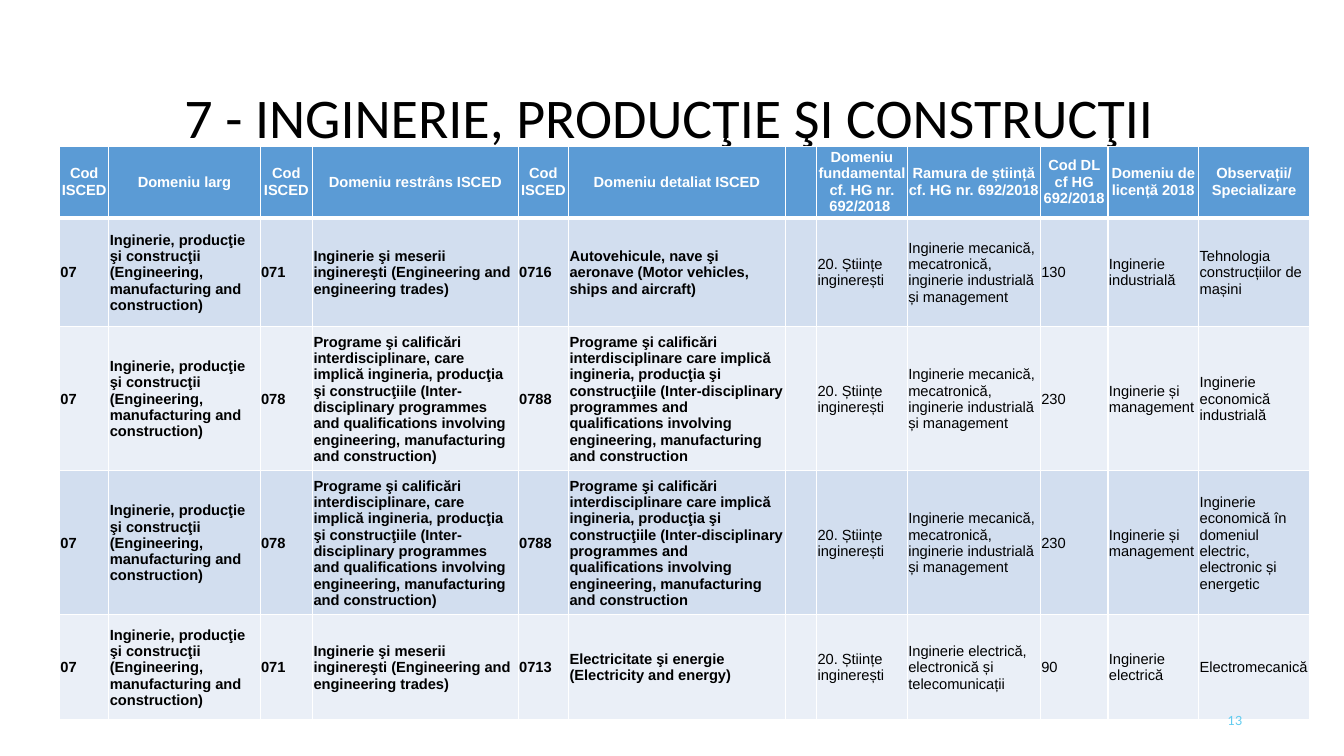
from dataclasses import dataclass

from lxml import etree
from pptx import Presentation, util as u
from pptx.dml.color import RGBColor
from pptx.enum import text
from pptx.oxml import ns

SLIDE_W, SLIDE_H = 13.33, 7.5


@dataclass(frozen=True)
class Theme:
    white: str = "FFFFFF"
    ink: str = "000000"
    header: str = "5B9BD5"
    bands: tuple = ("D2DEEF", "EAEFF7")
    page: str = "5FCBEF"
    title_font: str = "Calibri"
    table_font: str = "Arial"
    page_font: str = "Lato"
    title_size: float = 40
    table_size: float = 10.5
    page_size: float = 9
    rule: float = 1
    header_rule: float = 3


THEME = Theme()

COLUMNS = [0.49, 1.5, 0.52, 2.04, 0.5, 2.15, 0.31, 0.9, 1.32, 0.67, 0.9, 1.1]
ROWS = [0.71, 1.08, 1.43, 1.43, 1.04]
BOLD_COLUMNS = 7

HEADINGS = (
    "Cod ISCED", "Domeniu larg", "Cod ISCED", "Domeniu restrâns ISCED",
    "Cod ISCED", "Domeniu detaliat ISCED", "",
    "Domeniu fundamental cf. HG nr. 692/2018 ",
    "Ramura de știință cf. HG nr. 692/2018", "Cod DL cf HG 692/2018",
    "Domeniu de licență 2018", "Observații/ Specializare",
)
BROAD = ("07", "Inginerie, producţie şi construcţii "
         "(Engineering, manufacturing and construction)")
TRADES = ("071", "Inginerie şi meserii inginereşti "
          "(Engineering and engineering trades)")
PROGRAMMES = ("ingineria, producţia şi construcţiile (Inter-disciplinary programmes "
              "and qualifications involving engineering, manufacturing and construction")
MIXED = (
    "078", f"Programe şi calificări interdisciplinare, care implică {PROGRAMMES})",
    "0788", f"Programe şi calificări interdisciplinare care implică {PROGRAMMES}",
)
FUNDAMENTAL = ("", "20. Științe inginerești")
MECHANICAL = "Inginerie mecanică, mecatronică, inginerie industrială și management"
MANAGEMENT = (MECHANICAL, "230", "Inginerie și management")

SPECIALISATIONS = [
    (*BROAD, *TRADES, "0716",
     "Autovehicule, nave şi aeronave (Motor vehicles, ships and aircraft)",
     *FUNDAMENTAL, MECHANICAL, "130", "Inginerie industrială",
     "Tehnologia construcțiilor de mașini"),
    (*BROAD, *MIXED, *FUNDAMENTAL, *MANAGEMENT,
     "Inginerie economică industrială"),
    (*BROAD, *MIXED, *FUNDAMENTAL, *MANAGEMENT,
     "Inginerie economică în domeniul electric, electronic și energetic"),
    (*BROAD, *TRADES, "0713",
     "Electricitate şi energie (Electricity and energy)",
     *FUNDAMENTAL, "Inginerie electrică, electronică și telecomunicații", "90",
     "Inginerie electrică", "Electromecanică"),
]


def write(paragraph, words, font, size, color, align, bold=False):
    paragraph.alignment = align
    run = paragraph.add_run()
    run.text = words
    run.font.name = font
    run.font.size = u.Pt(size)
    run.font.bold = bold
    run.font.color.rgb = RGBColor.from_string(color)


def add_line(slide, box, words, *style, spacing=None):
    """Place one line of text, vertically centred in the box."""
    frame = slide.shapes.add_textbox(*map(u.Inches, box)).text_frame
    frame.word_wrap = True
    frame.vertical_anchor = text.MSO_ANCHOR.MIDDLE
    frame.paragraphs[0].line_spacing = spacing
    write(frame.paragraphs[0], words, *style)


def set_borders(cell, widths):
    """Draw the left, right, top and bottom rules; they must precede the fill."""
    properties = cell._tc.get_or_add_tcPr()
    for side, width in zip(("lnL", "lnR", "lnT", "lnB"), widths):
        line = etree.SubElement(properties, ns.qn(f"a:{side}"), w=str(u.Pt(width)))
        fill = etree.SubElement(line, ns.qn("a:solidFill"))
        etree.SubElement(fill, ns.qn("a:srgbClr"), val=THEME.white)


def fill_cell(cell, words, row, column):
    is_header = row == 0
    top = THEME.header_rule if row == 1 else THEME.rule
    bottom = THEME.header_rule if is_header else THEME.rule
    set_borders(cell, (THEME.rule, THEME.rule, top, bottom))
    color = THEME.header if is_header else THEME.bands[(row - 1) % 2]
    cell.fill.solid()
    cell.fill.fore_color.rgb = RGBColor.from_string(color)
    cell.vertical_anchor = text.MSO_ANCHOR.MIDDLE
    inset = u.Inches(0 if is_header else 0.01)
    cell.margin_left = cell.margin_right = cell.margin_top = inset
    cell.margin_bottom = 0
    if words:
        write(cell.text_frame.paragraphs[0], words, THEME.table_font, THEME.table_size,
              THEME.white if is_header else THEME.ink,
              text.PP_ALIGN.CENTER if is_header else text.PP_ALIGN.LEFT,
              is_header or column < BOLD_COLUMNS)


def add_domain_table(slide, left, top):
    box = map(u.Inches, (left, top, sum(COLUMNS), sum(ROWS)))
    table = slide.shapes.add_table(len(ROWS), len(COLUMNS), *box).table
    for column, width in zip(table.columns, COLUMNS):
        column.width = u.Inches(width)
    for row, height in zip(table.rows, ROWS):
        row.height = u.Inches(height)
    for r, entries in enumerate([HEADINGS, *SPECIALISATIONS]):
        for c, words in enumerate(entries):
            fill_cell(table.cell(r, c), words, r, c)


def add_domain_slide(deck):
    slide = deck.slides.add_slide(deck.slide_layouts[6])
    add_line(slide, (0.68, 0.83, 11.91, 0.72), "7 - INGINERIE, PRODUCŢIE ŞI CONSTRUCŢII",
             THEME.title_font, THEME.title_size, THEME.ink, text.PP_ALIGN.CENTER,
             spacing=0.9)
    add_domain_table(slide, 0.59, 1.45)
    add_line(slide, (9.42, 6.95, 3, 0.4), "13",
             THEME.page_font, THEME.page_size, THEME.page, text.PP_ALIGN.RIGHT)


def main():
    deck = Presentation()
    deck.slide_width, deck.slide_height = u.Inches(SLIDE_W), u.Inches(SLIDE_H)
    add_domain_slide(deck)
    deck.save("out.pptx")


if __name__ == "__main__":
    main()
